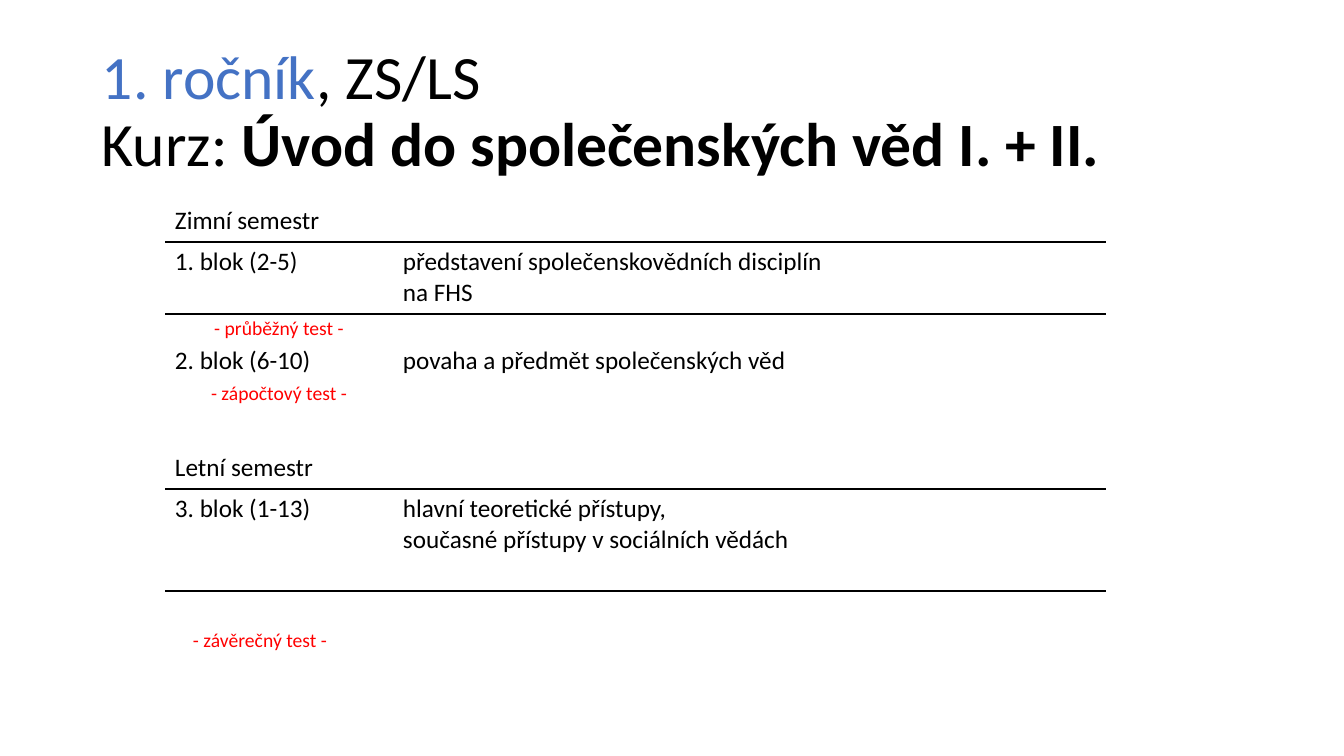
from lxml import etree
from pptx import Presentation
from pptx import util as u
from pptx.dml.color import RGBColor
from pptx.enum import text
from pptx.oxml import ns

PX = 914400 / 100.8
FONT = "Calibri"
BLACK = RGBColor(0x00, 0x00, 0x00)
BLUE = RGBColor(0x44, 0x72, 0xC4)
RED = RGBColor(0xFF, 0x00, 0x00)
PLAIN_TABLE = "{2D5ABB26-0587-4C30-8999-92F81FD0307C}"

COLUMNS = [228, 461, 252]
ROWS = [41, 72, 27, 41, 66, 41, 102, 27, 66, 66]
RULES = {0: 1.5, 1: 1.5, 5: 1.5, 6: 1}  # row: width of the line below it, in points
ENTRIES = {
    (0, 0): ["Zimní semestr"],
    (1, 0): ["1. blok (2-5)"],
    (1, 1): ["představení společenskovědních disciplín na FHS"],
    (3, 0): ["2. blok (6-10)"],
    (3, 1): ["povaha a předmět společenských věd"],
    (5, 0): ["Letní semestr"],
    (6, 0): ["3. blok (1-13)"],
    (6, 1): ["hlavní teoretické přístupy,", "současné přístupy v sociálních vědách"],
}


def px(n):
    return u.Emu(round(n * PX))


def add_run(p, content, size, color, bold=False):
    r = p.add_run()
    r.text = content
    r.font.name = FONT
    r.font.size = u.Pt(size)
    r.font.color.rgb = color
    r.font.bold = bold


def add_title(s):
    tf = s.shapes.add_textbox(px(92), px(40), px(1159), px(146)).text_frame
    tf.word_wrap = True
    tf.vertical_anchor = text.MSO_ANCHOR.MIDDLE
    p = tf.paragraphs[0]
    p.line_spacing = 0.9
    add_run(p, "1. ročník", 44, BLUE)
    add_run(p, ", ZS/LS", 44, BLACK)
    p.add_line_break()
    add_run(p, "Kurz: ", 44, BLACK)
    add_run(p, "Úvod do společenských věd I. + II.", 44, BLACK, bold=True)


def set_margins(cell, left, top, right, bottom):
    cell.margin_left, cell.margin_top = px(left), px(top)
    cell.margin_right, cell.margin_bottom = px(right), px(bottom)


def clear_cell(cell):
    """Strip fill and margins, and keep the empty line from stretching its row."""
    cell.fill.background()
    set_margins(cell, 0, 0, 0, 0)
    end = cell.text_frame.paragraphs[0]._p.get_or_add_endParaRPr()
    end.set("sz", "800")


def fill_cell(cell, lines):
    set_margins(cell, 10, 5, 10, 5)
    tf = cell.text_frame
    for i, line in enumerate(lines):
        p = tf.add_paragraph() if i else tf.paragraphs[0]
        add_run(p, line, 18, BLACK)


def add_test(cell, name, align=text.PP_ALIGN.CENTER, anchor=text.MSO_ANCHOR.TOP):
    cell.vertical_anchor = anchor
    p = cell.text_frame.paragraphs[0]
    p.alignment = align
    add_run(p, f"- {name} test -", 14, RED)


def add_rule(cell, width):
    """Draw the bottom border of a cell."""
    line = etree.Element(ns.qn("a:lnB"), w=str(u.Pt(width)))
    fill = etree.SubElement(line, ns.qn("a:solidFill"))
    etree.SubElement(fill, ns.qn("a:srgbClr"), val=str(BLACK))
    cell._tc.get_or_add_tcPr().insert(0, line)


def add_schedule(s):
    frame = s.shapes.add_table(len(ROWS), len(COLUMNS), px(165), px(201),
                               px(sum(COLUMNS)), px(sum(ROWS)))
    table = frame.table
    table.first_row = table.horz_banding = False
    table._tbl.tblPr.find(ns.qn("a:tableStyleId")).text = PLAIN_TABLE
    for column, width in zip(table.columns, COLUMNS):
        column.width = px(width)
    for i, (row, height) in enumerate(zip(table.rows, ROWS)):
        row.height = px(height)
        for cell in row.cells:
            clear_cell(cell)
            if i in RULES:
                add_rule(cell, RULES[i])
    for position, lines in ENTRIES.items():
        fill_cell(table.cell(*position), lines)

    add_test(table.cell(2, 0), "průběžný", anchor=text.MSO_ANCHOR.BOTTOM)
    add_test(table.cell(4, 0), "zápočtový")
    final = table.cell(8, 0)
    set_margins(final, 28, 11, 10, 5)
    add_test(final, "závěrečný", align=text.PP_ALIGN.LEFT)


def main():
    prs = Presentation()
    prs.slide_width, prs.slide_height = px(1344), px(756)
    s = prs.slides.add_slide(prs.slide_layouts[6])
    add_title(s)
    add_schedule(s)
    prs.save("out.pptx")


if __name__ == "__main__":
    main()
